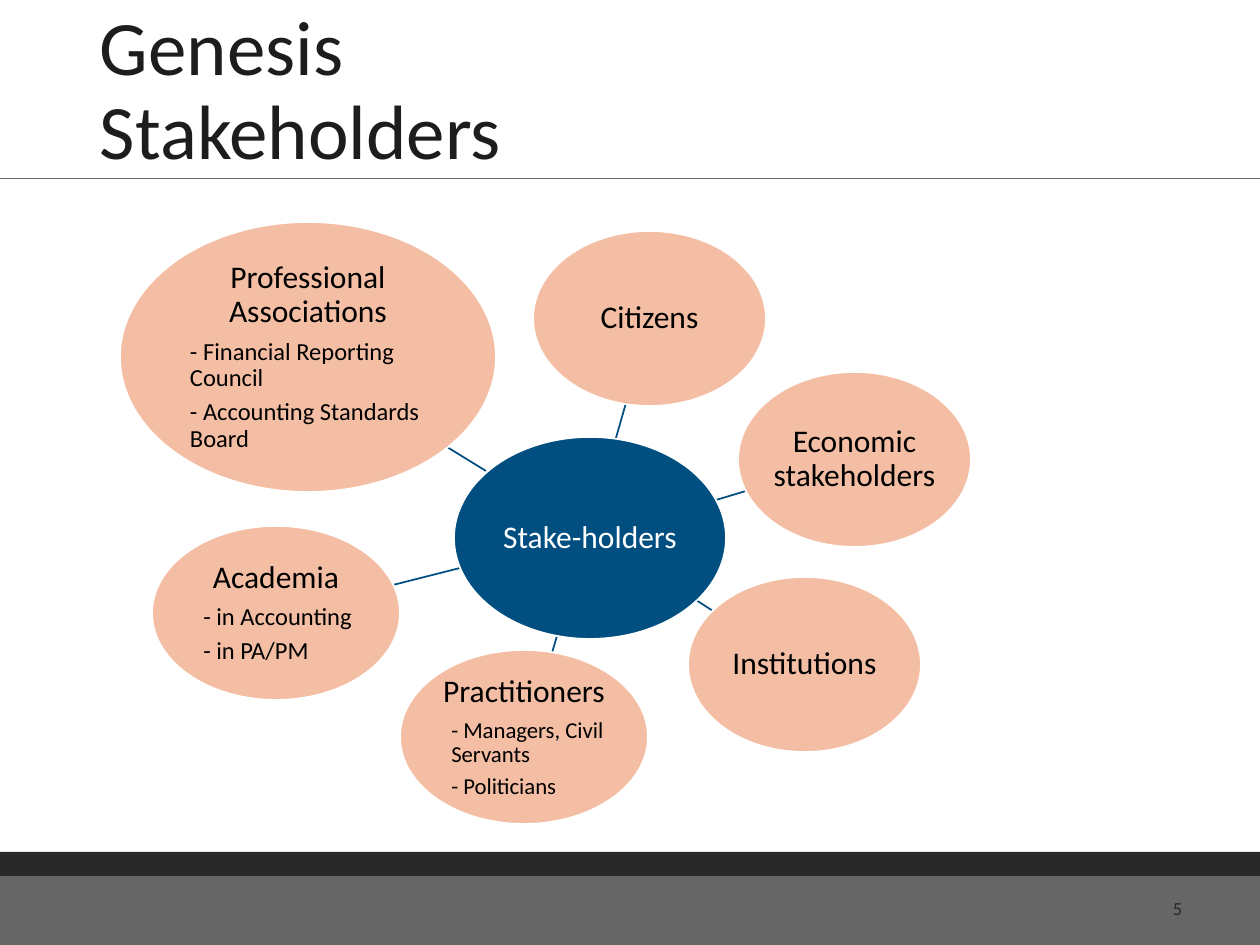
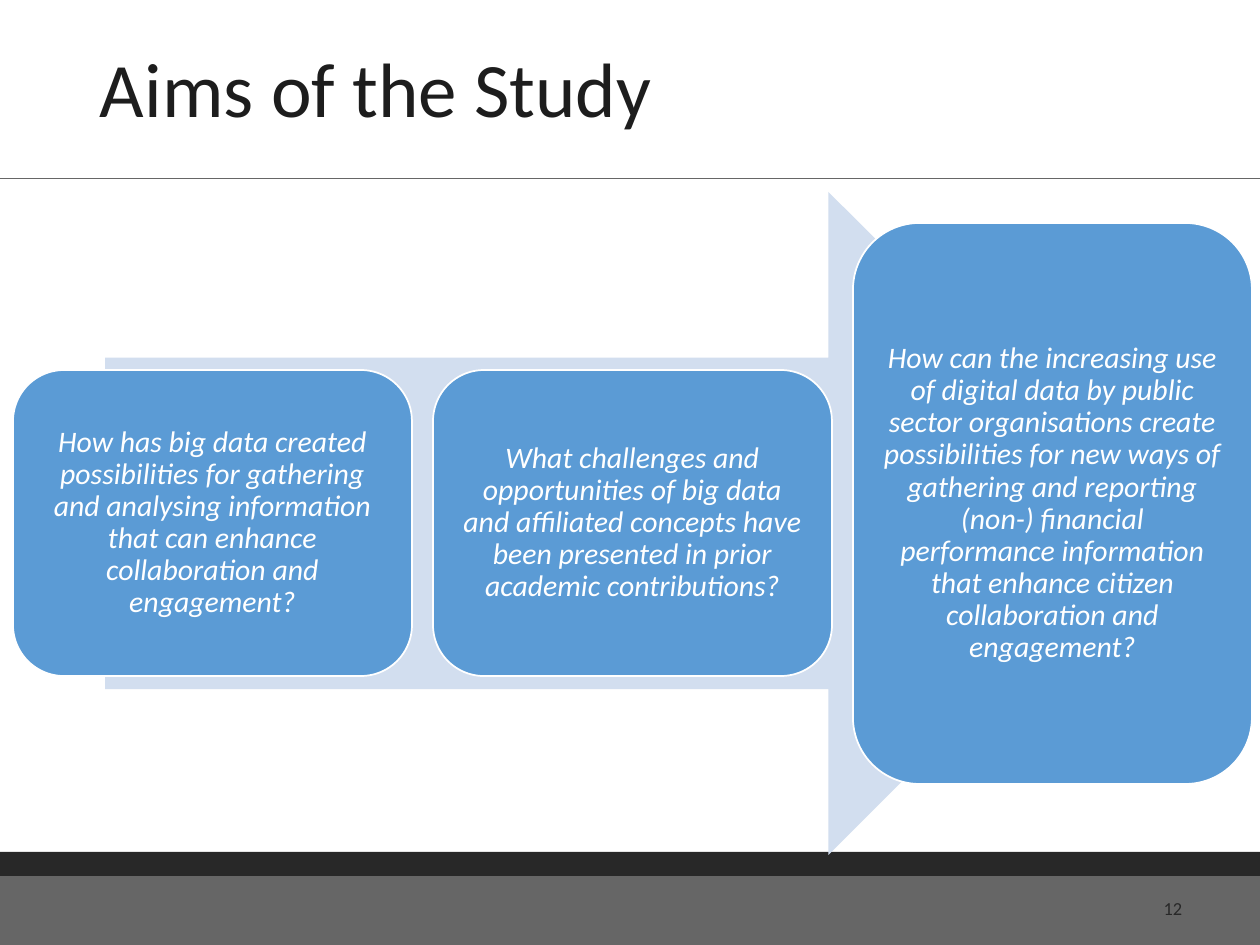
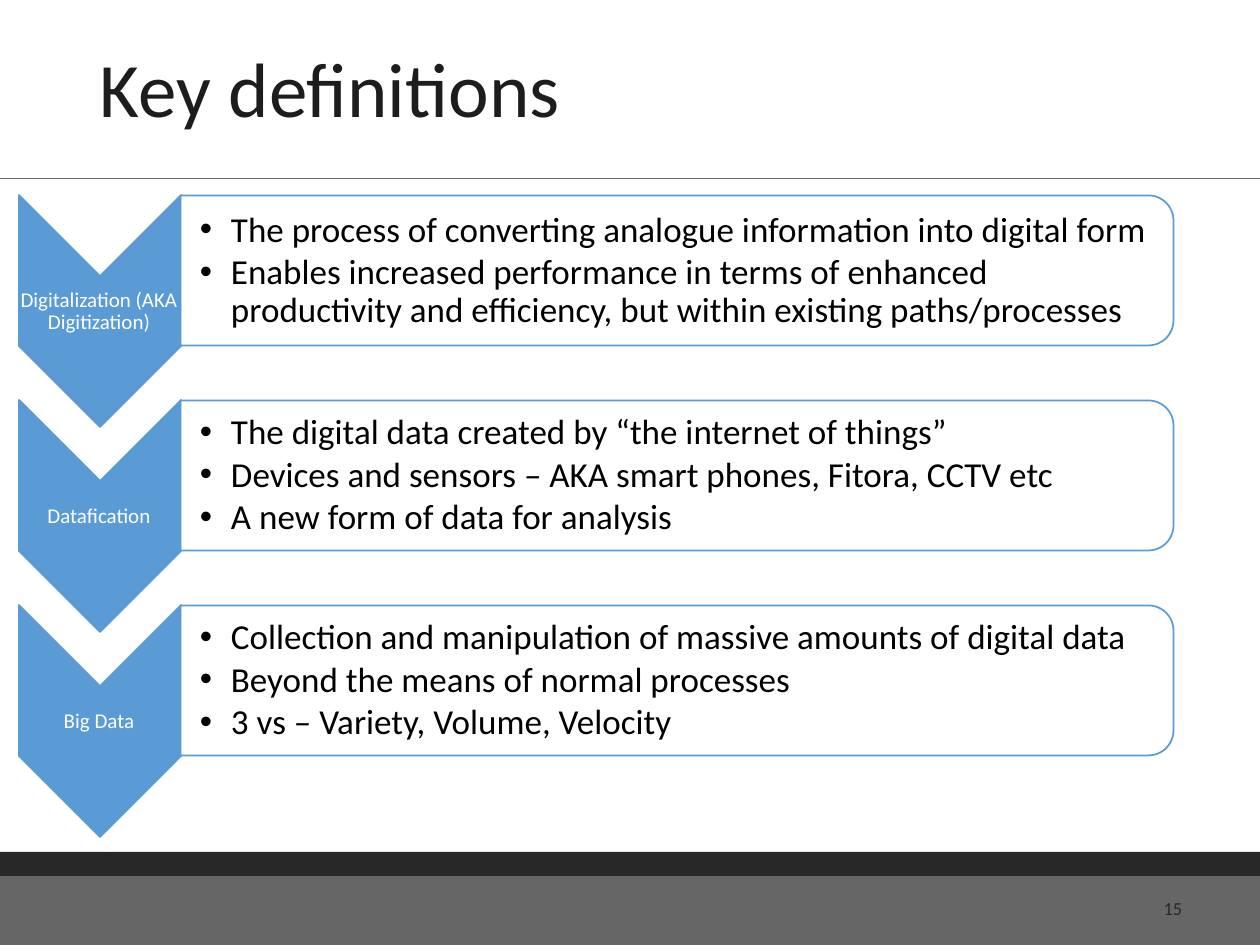
from lxml import etree
from pptx import Presentation
from pptx.dml.color import RGBColor
from pptx.enum.shapes import MSO_CONNECTOR, MSO_SHAPE
from pptx.enum.text import MSO_ANCHOR, PP_ALIGN
from pptx.oxml.ns import qn
from pptx.util import Inches, Pt

SCALE = Inches(1) / 126
WIDTH, HEIGHT = 1260, 945
FONT = "Calibri"
WHITE, BLACK, GREY, DARK, TITLE = "FFFFFF", "000000", "666666", "282828", "1D1D1D"
NAVY, ORANGE, BLUE, PALE_BLUE = "004F80", "EA7E4B", "5B9BD5", "D2DEEF"
RECTANGLE, ELLIPSE = MSO_SHAPE.RECTANGLE, MSO_SHAPE.OVAL
ROUNDED, ARROW = MSO_SHAPE.ROUNDED_RECTANGLE, MSO_SHAPE.RIGHT_ARROW
CHEVRON, TAB = MSO_SHAPE.CHEVRON, MSO_SHAPE.ROUND_2_SAME_RECTANGLE
STRAIGHT, MIDDLE = MSO_CONNECTOR.STRAIGHT, MSO_ANCHOR.MIDDLE
LEFT, CENTER, RIGHT = PP_ALIGN.LEFT, PP_ALIGN.CENTER, PP_ALIGN.RIGHT


def color(target, value):
    target.rgb = RGBColor.from_string(value)


def add_block(slide, kind, box, fill=None, line=None, alpha=100, rotation=0):
    place = [round(length * SCALE) for length in box]
    if kind is None:
        return slide.shapes.add_textbox(*place)
    shape = slide.shapes.add_shape(kind, *place)
    shape.shadow.inherit = False
    shape.rotation = rotation
    shape.fill.solid()
    color(shape.fill.fore_color, fill)
    if alpha < 100:
        fill_color = shape.fill._xPr.find(qn("a:solidFill"))[0]
        etree.SubElement(fill_color, qn("a:alpha"), val=str(alpha * 1000))
    if line:
        color(shape.line.color, line)
        shape.line.width = Pt(1)
    else:
        shape.line.fill.background()
    return shape


def write(shape, text, size=18, ink=BLACK, align=CENTER, italic=False,
          inset=1, left=None, indent=0, bullet=False, after=0.3):
    frame = shape.text_frame
    frame.word_wrap = True
    frame.vertical_anchor = MIDDLE
    frame.margin_top = frame.margin_bottom = frame.margin_right = round(inset * SCALE)
    frame.margin_left = round((inset if left is None else left) * SCALE)
    paragraph = frame.add_paragraph() if frame.text else frame.paragraphs[0]
    properties = paragraph._p.get_or_add_pPr()
    properties.set("marL", str(round(indent * SCALE)))
    if bullet:
        properties.set("indent", str(-round(indent * SCALE)))
        etree.SubElement(properties, qn("a:buFont"), typeface="Arial")
        etree.SubElement(properties, qn("a:buChar"), char="•")
    paragraph.text = text
    paragraph.alignment = align
    paragraph.line_spacing = 0.9
    paragraph.space_after = Pt(round(size * after, 1))
    for run in paragraph.runs:
        run.font.name = FONT
        run.font.size = Pt(size)
        run.font.italic = italic
        color(run.font.color, ink)


presentation = Presentation()
presentation.slide_width = round(WIDTH * SCALE)
presentation.slide_height = round(HEIGHT * SCALE)

rule = (0, 178, WIDTH, 178, GREY, 0.5)
spokes = [
    (616, 438, 626, 403, NAVY, 1),
    (486, 471, 447, 447, NAVY, 1),
    (460, 568, 393, 585, NAVY, 1),
    (716, 500, 746, 491, NAVY, 1),
    (557, 636, 552, 653, NAVY, 1),
    (696, 600, 713, 611, NAVY, 1),
]
pages = [
    ("Genesis\nStakeholders", "5", [rule] + spokes),
    ("Aims of the Study", "12", [rule]),
    ("Key definitions", "15", [rule]),
]
slides = []
for title, number, lines in pages:
    slide = presentation.slides.add_slide(presentation.slide_layouts[6])
    slides.append(slide)
    add_block(slide, RECTANGLE, (0, 876, WIDTH, 69), GREY)
    add_block(slide, RECTANGLE, (0, 852, WIDTH, 24), DARK)
    for start_x, start_y, end_x, end_y, ink, width in lines:
        ends = [round(length * SCALE) for length in (start_x, start_y, end_x, end_y)]
        connector = slide.shapes.add_connector(STRAIGHT, *ends)
        color(connector.line.color, ink)
        connector.line.width = Pt(width)
        etree.SubElement(connector._element.spPr, qn("a:effectLst"))
    number_box = add_block(slide, None, (911, 892, 284, 35))
    write(number_box, number, size=10.5, ink=DARK, align=RIGHT, inset=13, after=0)
    title_box = add_block(slide, None, (87, 1, 1086, 183))
    write(title_box, title, size=44, ink=TITLE, align=LEFT, inset=6, left=13, after=0)

stakeholder_slide, aims_slide, definitions_slide = slides

hub = add_block(stakeholder_slide, ELLIPSE, (454, 437, 272, 202), NAVY, WHITE)
write(hub, "Stake-holders", ink=WHITE)
stakeholders = [
    ((533, 231, 233, 175), "Citizens", 14, []),
    ((120, 222, 376, 270), "Professional Associations", 14,
     ["- Financial Reporting Council", "- Accounting Standards Board"]),
    ((152, 526, 248, 174), "Academia", 14, ["- in Accounting", "- in PA/PM"]),
    ((738, 372, 233, 175), "Economic stakeholders", 14, []),
    ((400, 650, 248, 174), "Practitioners", 13,
     ["- Managers, Civil Servants", "- Politicians"]),
    ((688, 577, 233, 175), "Institutions", 14, []),
]
for box, name, detail_size, details in stakeholders:
    bubble = add_block(stakeholder_slide, ELLIPSE, box, ORANGE, WHITE, alpha=50)
    write(bubble, name)
    for detail in details:
        write(bubble, detail, size=detail_size, align=LEFT, indent=14)

add_block(aims_slide, ARROW, (105, 192, 1055, 663), PALE_BLUE)
aims = [
    (370, 306, "How has big data created possibilities for gathering and analysing "
     "information that can enhance collaboration and engagement?"),
    (370, 306, "What challenges and opportunities of big data and affiliated concepts "
     "have been presented in prior academic contributions?"),
    (223, 561, "How can the increasing use of digital data by public sector organisations "
     "create possibilities for new ways of gathering and reporting (non-) financial "
     "performance information that enhance citizen collaboration and engagement?"),
]
for index, (top, height, question) in enumerate(aims):
    card = add_block(aims_slide, ROUNDED, (13 + index * 420, top, 399, height), BLUE, WHITE)
    write(card, question, size=17, ink=WHITE, italic=True, inset=9)

definitions = [
    ("Digitalization (AKA Digitization)", [
        "The process of converting analogue information into digital form",
        "Enables increased performance in terms of enhanced productivity and efficiency, "
        "but within existing paths/processes"]),
    ("Datafication", [
        "The digital data created by “the internet of things”",
        "Devices and sensors – AKA smart phones, Fitora, CCTV etc",
        "A new form of data for analysis"]),
    ("Big Data", [
        "Collection and manipulation of massive amounts of digital data",
        "Beyond the means of normal processes",
        "3 vs – Variety, Volume, Velocity"]),
]
for index, (term, points) in enumerate(definitions):
    shift = index * 205
    add_block(definitions_slide, CHEVRON, (-16, 230 + shift, 232, 162), BLUE, BLUE, rotation=90)
    term_box = add_block(definitions_slide, None, (18, 277 + shift, 162, 69))
    write(term_box, term, size=12, ink=WHITE)
    add_block(definitions_slide, TAB, (602, shift - 226, 150, 993), WHITE, BLUE,
              alpha=90, rotation=90)
    points_box = add_block(definitions_slide, None, (180, 203 + shift, 985, 136))
    for point in points:
        write(points_box, point, size=20, align=LEFT, left=20, indent=31,
              bullet=True, after=0.13)

presentation.save("out.pptx")
